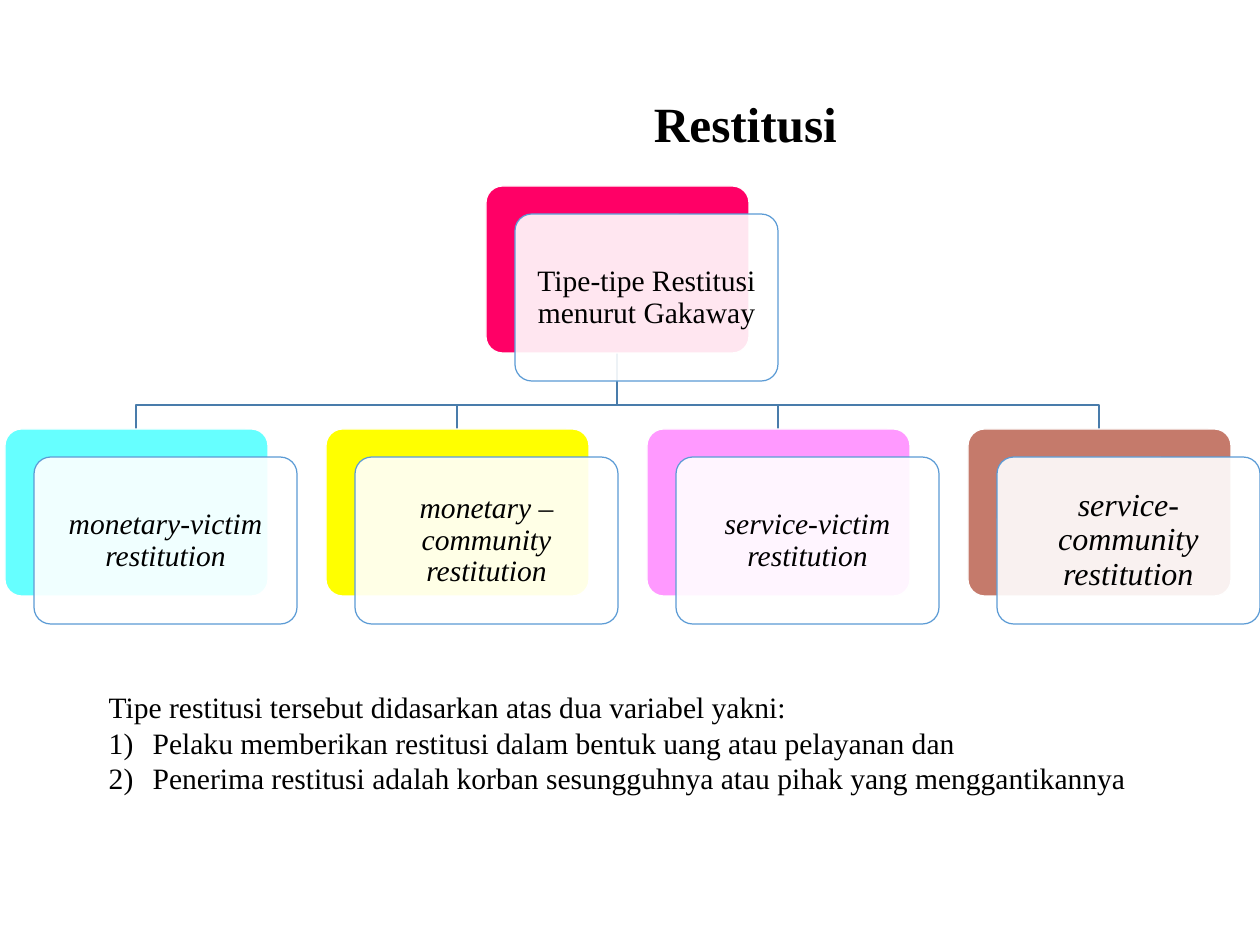
from dataclasses import dataclass
from typing import NamedTuple

from lxml import etree
from pptx import Presentation
from pptx.dml.color import RGBColor
from pptx.enum.shapes import MSO_SHAPE
from pptx.enum.text import MSO_ANCHOR, PP_ALIGN
from pptx.oxml.ns import qn
from pptx.util import Pt

ROUNDED = MSO_SHAPE.ROUNDED_RECTANGLE
MIDDLE = MSO_ANCHOR.MIDDLE
CENTER = PP_ALIGN.CENTER
LEFT = PP_ALIGN.LEFT
SCALE = 10320


class Box(NamedTuple):
    left: int
    top: int
    width: int
    height: int


@dataclass(frozen=True)
class Theme:
    font: str = "Times New Roman"
    text: str = "000000"
    white: str = "FFFFFF"
    branch: str = "497CAB"
    outline: str = "5B9BD5"
    root: str = "FF0066"
    panel_alpha: int = 90000
    title_size: int = 40
    body_size: int = 24
    large_size: int = 26


THEME = Theme()
CARD_WIDTH, CARD_HEIGHT = 263, 167
PANEL_SHIFT = 29, 28
CARD_PITCH = 321
ROOT_LEFT = 481
LEVEL_DROP = 243
BUS_DROP = 219
PANEL_MARGIN = 9
LIST_INDENT = 44

ROOT_LABEL = "Tipe-tipe Restitusi menurut Gakaway"
TYPES = [
    ("monetary-victim restitution", "66FFFF", THEME.body_size),
    ("monetary –community restitution", "FFFF00", THEME.body_size),
    ("service-victim restitution", "FF99FF", THEME.body_size),
    ("service-community restitution", "C57A6B", THEME.large_size),
]
INTRO = "Tipe restitusi tersebut didasarkan atas dua variabel yakni:"
VARIABLES = [
    "Pelaku memberikan restitusi dalam bentuk uang atau pelayanan dan",
    "Penerima restitusi adalah korban sesungguhnya atau pihak yang menggantikannya",
]


def emu(*lengths):
    return [length * SCALE for length in lengths]


def color(code):
    return RGBColor.from_string(code)


def write(para, text, size, align=LEFT, bold=False, italic=False):
    para.text = text
    para.alignment = align
    for span in para.runs:
        span.font.name = THEME.font
        span.font.size = Pt(size)
        span.font.color.rgb = color(THEME.text)
        span.font.bold = bold
        span.font.italic = italic


def number(para):
    properties = para._p.get_or_add_pPr()
    properties.set("marL", str(LIST_INDENT * SCALE))
    properties.set("indent", str(-LIST_INDENT * SCALE))
    etree.SubElement(properties, qn("a:buFont"), typeface="+mj-lt")
    etree.SubElement(properties, qn("a:buAutoNum"), type="arabicParenR")


def add_text_frame(page, box):
    frame = page.shapes.add_textbox(*emu(*box)).text_frame
    frame.word_wrap = True
    return frame


def add_title(page, box):
    frame = add_text_frame(page, box)
    write(frame.paragraphs[0], "Restitusi", THEME.title_size, CENTER, bold=True)


def add_explanation(page, box):
    frame = add_text_frame(page, box)
    write(frame.paragraphs[0], INTRO, THEME.body_size)
    for variable in VARIABLES:
        para = frame.add_paragraph()
        number(para)
        write(para, variable, THEME.body_size)


def add_rounded(page, box, fill, line):
    shape = page.shapes.add_shape(ROUNDED, *emu(*box))
    shape.adjustments[0] = 0.1
    shape.shadow.inherit = False
    shape.fill.solid()
    shape.fill.fore_color.rgb = color(fill)
    shape.line.color.rgb = color(line)
    shape.line.width = Pt(1)
    return shape


def add_card(page, box, label, fill, size, italic):
    add_rounded(page, box, fill, THEME.white)
    shift_x, shift_y = PANEL_SHIFT
    panel_box = box._replace(left=box.left + shift_x, top=box.top + shift_y)
    panel = add_rounded(page, panel_box, THEME.white, THEME.outline)
    tint = panel._element.spPr.find(qn("a:solidFill"))[0]
    etree.SubElement(tint, qn("a:alpha"), val=str(THEME.panel_alpha))
    frame = panel.text_frame
    frame.word_wrap = True
    frame.vertical_anchor = MIDDLE
    margin = PANEL_MARGIN * SCALE
    frame.margin_left = frame.margin_right = margin
    frame.margin_top = frame.margin_bottom = margin
    para = frame.paragraphs[0]
    write(para, label, size, CENTER, italic=italic)
    para.line_spacing = 0.9


def add_branch(page, parent, child, bus):
    start = parent.left + parent.width // 2
    end = child.left + child.width // 2
    builder = page.shapes.build_freeform(start, parent.top + parent.height, SCALE)
    builder.add_line_segments([(start, bus), (end, bus), (end, child.top)], close=False)
    branch = builder.convert_to_shape()
    branch.shadow.inherit = False
    branch.fill.background()
    branch.line.color.rgb = color(THEME.branch)
    branch.line.width = Pt(1)


def add_hierarchy(page, box):
    root = Box(box.left + ROOT_LEFT, box.top, CARD_WIDTH, CARD_HEIGHT)
    children = [
        Box(box.left + index * CARD_PITCH, box.top + LEVEL_DROP, CARD_WIDTH, CARD_HEIGHT)
        for index in range(len(TYPES))
    ]
    for child in reversed(children):
        add_branch(page, root, child, box.top + BUS_DROP)
    add_card(page, root, ROOT_LABEL, THEME.root, THEME.body_size, italic=False)
    for child, (label, fill, size) in zip(children, TYPES):
        add_card(page, child, label, fill, size, italic=True)


def main():
    deck = Presentation()
    deck.slide_width, deck.slide_height = emu(1260, 945)
    page = deck.slides.add_slide(deck.slide_layouts[6])
    add_title(page, Box(231, 89, 1029, 68))
    add_explanation(page, Box(100, 685, 1102, 116))
    add_hierarchy(page, Box(5, 186, 1255, 438))
    deck.save("out.pptx")


if __name__ == "__main__":
    main()
